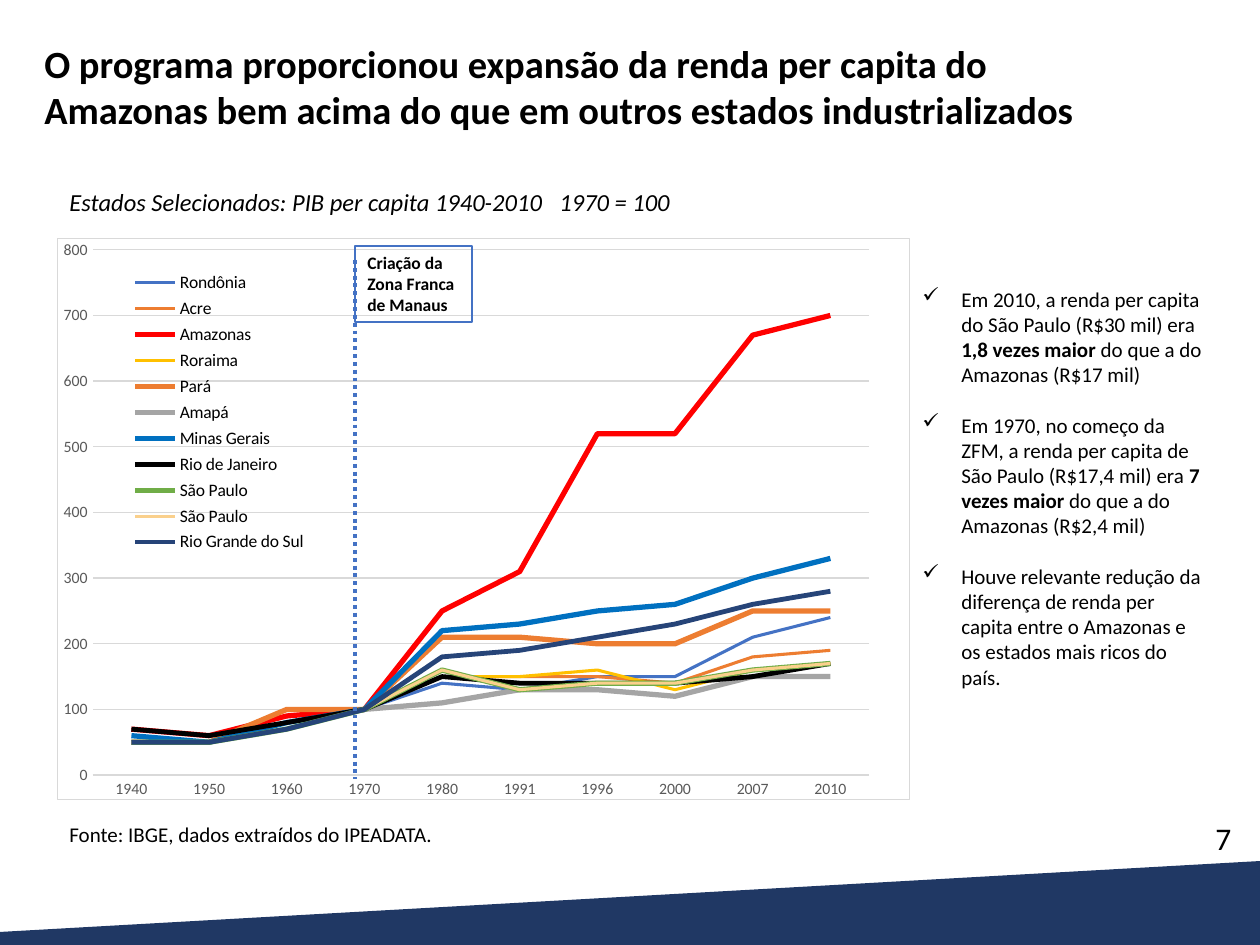
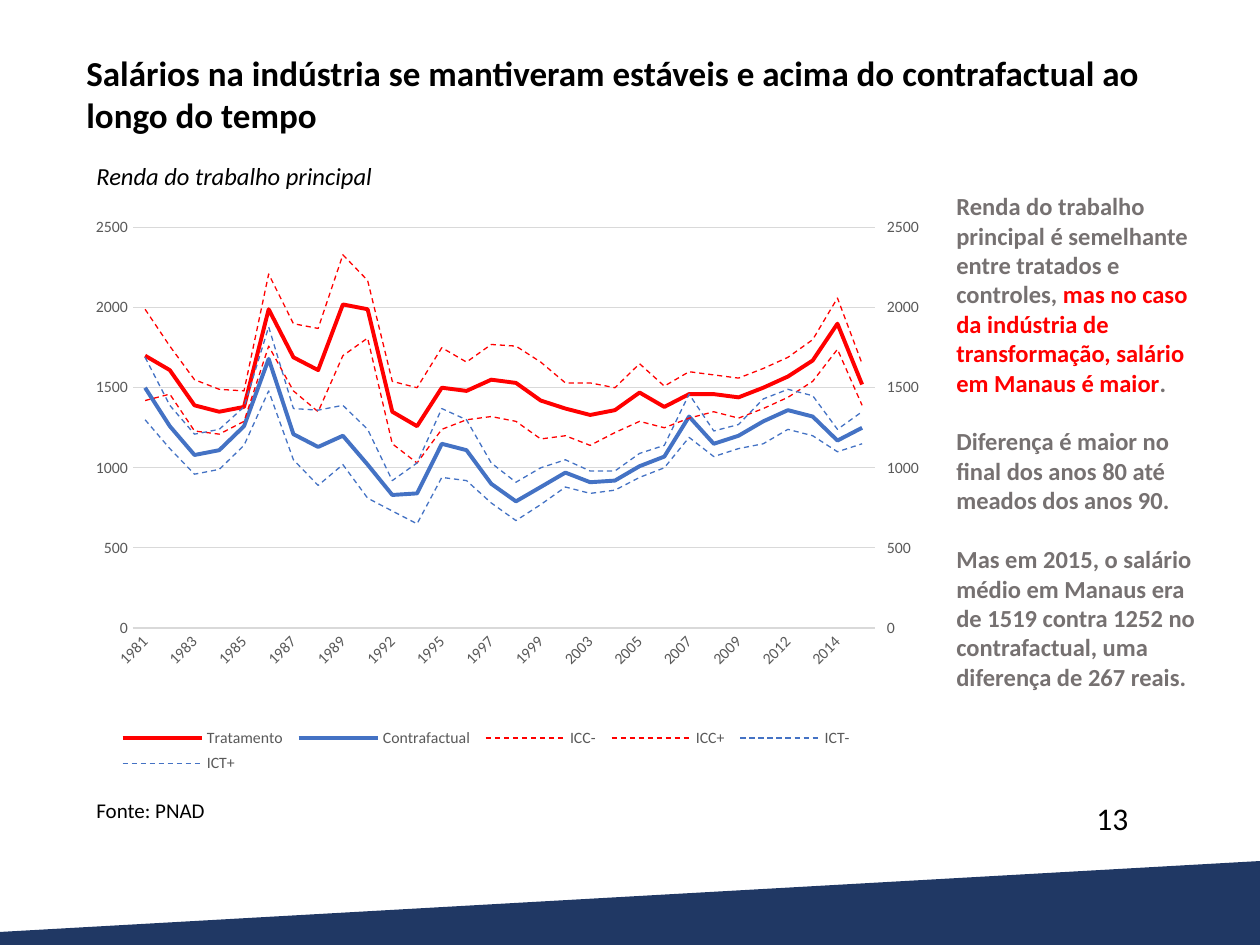
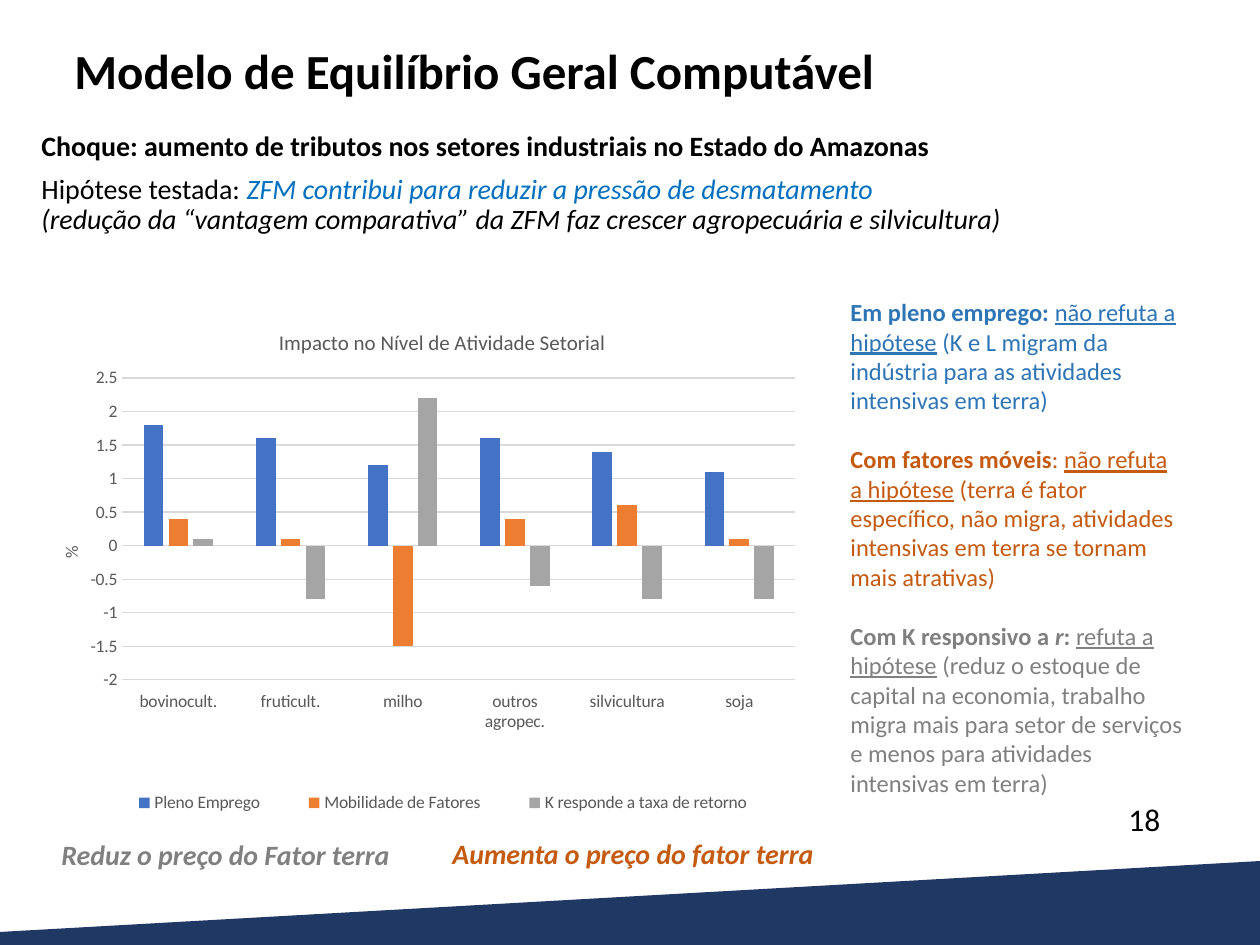
"""Builds three slides on the Zona Franca de Manaus: two line charts and one column chart."""
from copy import deepcopy

from lxml import etree
from pptx import Presentation
from pptx.chart.data import CategoryChartData
from pptx.dml.color import RGBColor
from pptx.enum.chart import XL_CHART_TYPE, XL_LEGEND_POSITION, XL_TICK_LABEL_POSITION, XL_TICK_MARK
from pptx.enum.dml import MSO_LINE
from pptx.enum.shapes import MSO_CONNECTOR, MSO_SHAPE
from pptx.enum.text import MSO_ANCHOR, PP_ALIGN
from pptx.oxml import parse_xml
from pptx.oxml.ns import nsdecls, qn
from pptx.util import Pt

LINE, COLUMN = XL_CHART_TYPE.LINE, XL_CHART_TYPE.COLUMN_CLUSTERED
RIGHT, BOTTOM = XL_LEGEND_POSITION.RIGHT, XL_LEGEND_POSITION.BOTTOM
NO_TICK, LOW = XL_TICK_MARK.NONE, XL_TICK_LABEL_POSITION.LOW
DASH, DOTS = MSO_LINE.DASH, MSO_LINE.ROUND_DOT
MIDDLE, LEFT = MSO_ANCHOR.MIDDLE, PP_ALIGN.LEFT
EMU = 914400 / 126
WIDTH, HEIGHT = 1260, 945
FONT = "Calibri"

BLACK = RGBColor(0x00, 0x00, 0x00)
NAVY = RGBColor(0x20, 0x38, 0x64)
RED = RGBColor(0xFF, 0x00, 0x00)
BLUE = RGBColor(0x44, 0x72, 0xC4)
ORANGE = RGBColor(0xED, 0x7D, 0x31)
SILVER = RGBColor(0xA5, 0xA5, 0xA5)
GOLD = RGBColor(0xFF, 0xC0, 0x00)
SAND = RGBColor(0xFA, 0xD0, 0x8C)
GREEN = RGBColor(0x70, 0xAD, 0x47)
SKY = RGBColor(0x00, 0x70, 0xC0)
DEEP_BLUE = RGBColor(0x26, 0x44, 0x78)
STEEL = RGBColor(0x2E, 0x75, 0xB6)
RUST = RGBColor(0xC5, 0x5A, 0x11)
GRAY = RGBColor(0x80, 0x80, 0x80)
WARM_GRAY = RGBColor(0x76, 0x71, 0x71)
LABEL = RGBColor(0x59, 0x59, 0x59)
GRID = RGBColor(0xD9, 0xD9, 0xD9)

BAND = [(0, 932), (WIDTH, 861), (WIDTH, HEIGHT), (0, HEIGHT)]
BREAK = ("\n", "", BLACK)

INCOME_YEARS = "1940 1950 1960 1970 1980 1991 1996 2000 2007 2010".split()
INCOME = [
    ("Rondônia", [None, None, None, 100, 140, 130, 150, 150, 210, 240], BLUE, 1.75),
    ("Acre", [None, None, None, 100, 150, 150, 150, 140, 180, 190], ORANGE, 1.75),
    ("Amazonas", [70, 60, 90, 100, 250, 310, 520, 520, 670, 700], RED, 3),
    ("Roraima", [None, None, None, 100, 150, 150, 160, 130, 160, 170], GOLD, 1.75),
    ("Pará", [50, 50, 100, 100, 210, 210, 200, 200, 250, 250], ORANGE, 3),
    ("Amapá", [None, None, None, 100, 110, 130, 130, 120, 150, 150], SILVER, 3),
    ("Minas Gerais", [60, 50, 80, 100, 220, 230, 250, 260, 300, 330], SKY, 3),
    ("Rio de Janeiro", [70, 60, 80, 100, 150, 140, 140, 140, 150, 170], BLACK, 2.75),
    ("São Paulo", [50, 50, 70, 100, 160, 130, 140, 140, 160, 170], GREEN, 3),
    ("São Paulo", [50, 50, 70, 100, 160, 130, 140, 140, 160, 170], SAND, 1.75),
    ("Rio Grande do Sul", [50, 50, 70, 100, 180, 190, 210, 230, 260, 280], DEEP_BLUE, 2.75),
]
INCOME_NOTES = [
    [("Em 2010, a renda per capita do São Paulo (R$30 mil) era ", "", BLACK),
     ("1,8 vezes maior ", "b", BLACK), ("do que a do Amazonas (R$17 mil)", "", BLACK)],
    [("Em 1970, no começo da ZFM, a renda per capita de São Paulo (R$17,4 mil) era ", "", BLACK),
     ("7 vezes maior", "b", BLACK), (" do que a do Amazonas (R$2,4 mil)", "", BLACK)],
    [("Houve relevante redução da diferença de renda per capita entre o Amazonas "
      "e os estados mais ricos do país.", "", BLACK)],
]

WAGE_YEARS = ("1981 1982 1983 1984 1985 1986 1987 1988 1989 1990 1992 1993 1995 1996 1997 "
              "1998 1999 2002 2003 2004 2005 2006 2007 2008 2009 2011 2012 2013 2014 2015").split()
WAGES = [
    ("Tratamento", [1700, 1610, 1390, 1350, 1380, 1990, 1690, 1610, 2020, 1990,
                    1350, 1260, 1500, 1480, 1550, 1530, 1420, 1370, 1330, 1360,
                    1470, 1380, 1460, 1460, 1440, 1500, 1570, 1670, 1900, 1520], RED, 2.25),
    ("Contrafactual", [1500, 1260, 1080, 1110, 1260, 1680, 1210, 1130, 1200, 1020,
                       830, 840, 1150, 1110, 900, 790, 880, 970, 910, 920,
                       1010, 1070, 1320, 1150, 1200, 1290, 1360, 1320, 1170, 1250], BLUE, 2.25),
    ("ICC-", [1420, 1460, 1230, 1210, 1290, 1760, 1480, 1350, 1700, 1810,
              1150, 1030, 1240, 1300, 1320, 1290, 1180, 1200, 1140, 1220,
              1290, 1250, 1310, 1350, 1310, 1370, 1440, 1540, 1740, 1390], RED, 0.75),
    ("ICC+", [1990, 1760, 1550, 1490, 1480, 2210, 1900, 1870, 2330, 2170,
              1540, 1500, 1750, 1660, 1770, 1760, 1660, 1530, 1530, 1500,
              1650, 1510, 1600, 1580, 1560, 1620, 1690, 1800, 2060, 1650], RED, 0.75),
    ("ICT-", [1300, 1120, 960, 990, 1140, 1480, 1050, 890, 1020, 810,
              730, 650, 940, 920, 780, 670, 770, 880, 840, 860,
              940, 1000, 1190, 1070, 1120, 1150, 1240, 1200, 1100, 1150], BLUE, 0.75),
    ("ICT+", [1690, 1390, 1210, 1240, 1380, 1880, 1370, 1360, 1390, 1240,
              920, 1030, 1370, 1300, 1030, 910, 1000, 1050, 980, 980,
              1090, 1140, 1460, 1230, 1270, 1430, 1490, 1450, 1240, 1350], BLUE, 0.75),
]
WAGE_NOTES = [
    [("Renda do trabalho principal é semelhante entre tratados e controles, ", "b", WARM_GRAY),
     ("mas no caso da indústria de transformação, salário em Manaus é maior", "b", RED),
     (".", "b", WARM_GRAY)],
    [("Diferença é maior no final dos anos 80 até meados dos anos 90.", "b", WARM_GRAY)],
    [("Mas em 2015, o salário médio em Manaus era de 1519 contra 1252 no contrafactual, "
      "uma diferença de 267 reais.", "b", WARM_GRAY)],
]

SECTORS = ["bovinocult.", "fruticult.", "milho", "outros agropec.", "silvicultura", "soja"]
IMPACTS = [
    ("Pleno Emprego", [1.8, 1.6, 1.2, 1.6, 1.4, 1.1], BLUE, None),
    ("Mobilidade de Fatores", [0.4, 0.1, -1.5, 0.4, 0.6, 0.1], ORANGE, None),
    ("K responde a taxa de retorno", [0.1, -0.8, 2.2, -0.6, -0.8, -0.8], SILVER, None),
]
SHOCK = [
    [("Choque: aumento de tributos nos setores industriais no Estado do Amazonas", "b", BLACK)],
    [("Hipótese testada: ", "", BLACK),
     ("ZFM contribui para reduzir a pressão de desmatamento", "i", SKY), BREAK,
     ("(redução da “vantagem comparativa” da ZFM faz crescer agropecuária e silvicultura)",
      "i", BLACK)],
]
SCENARIOS = [
    [("Em pleno emprego: ", "b", STEEL), ("não refuta a hipótese", "u", STEEL),
     (" (K e L migram da indústria para as atividades intensivas em terra)", "", STEEL)],
    [("Com fatores móveis", "b", RUST), (": ", "", RUST), ("não refuta a hipótese", "u", RUST),
     (" (terra é fator específico, não migra, atividades intensivas em terra "
      "se tornam mais atrativas)", "", RUST)],
    [("Com K responsivo a ", "b", GRAY), ("r", "bi", GRAY), (": ", "b", GRAY),
     ("refuta a hipótese", "u", GRAY),
     (" (reduz o estoque de capital na economia, trabalho migra mais para setor de serviços "
      "e menos para atividades intensivas em terra)", "", GRAY)],
]


def px(*lengths):
    return [round(length * EMU) for length in lengths]


def write(frame, paragraphs, size, gap=0, spacing=None, bullet=None, tab=None):
    frame.word_wrap = True
    for index, spans in enumerate(paragraphs):
        para = frame.paragraphs[0] if index == 0 else frame.add_paragraph()
        para.alignment = LEFT
        if bullet:
            indent = px(39)[0]
            properties = para._p.get_or_add_pPr()
            properties.set("marL", str(indent))
            properties.set("indent", str(-indent))
            etree.SubElement(properties, qn("a:buChar"), char=bullet)
        if tab:
            tabs = etree.SubElement(para._p.get_or_add_pPr(), qn("a:tabLst"))
            etree.SubElement(tabs, qn("a:tab"), pos=str(px(tab)[0]), algn="l")
        if spacing:
            para.line_spacing = spacing
        if index:
            para.space_before = Pt(gap)
        for span in spans:
            if span == BREAK:
                para.add_line_break()
                continue
            text, style, color = span
            run = para.add_run()
            run.text = text
            run.font.name, run.font.size = FONT, Pt(size)
            run.font.bold, run.font.italic = "b" in style, "i" in style
            run.font.underline = "u" in style
            run.font.color.rgb = color


def add_text(page, place, paragraphs, size, **options):
    box = page.shapes.add_textbox(*px(*place))
    write(box.text_frame, paragraphs, size, **options)
    return box


def add_line_of_text(page, place, text, size, style="", color=BLACK, **options):
    return add_text(page, place, [[(text, style, color)]], size, **options)


def add_page(deck, title, title_place, title_size, number, number_at):
    page = deck.slides.add_slide(deck.slide_layouts[6])
    builder = page.shapes.build_freeform(*BAND[0], scale=EMU)
    builder.add_line_segments(BAND[1:])
    band = builder.convert_to_shape()
    band.shadow.inherit = False
    band.fill.solid()
    band.fill.fore_color.rgb = NAVY
    band.line.fill.background()
    heading = add_line_of_text(page, title_place, title, title_size, "b")
    add_line_of_text(page, (*number_at, 121, 50), number, 18)
    return page, heading


def style_font(font, size, color):
    font.name, font.size, font.bold = FONT, Pt(size), False
    font.color.rgb = color


def style_line(line, color, width):
    line.color.rgb = color
    line.width = Pt(width)


def set_layout(parent, index, x, y, w=None, h=None, inner=False):
    for old in parent.findall(qn("c:layout")):
        parent.remove(old)
    layout = etree.Element(qn("c:layout"))
    manual = etree.SubElement(layout, qn("c:manualLayout"))
    settings = [("layoutTarget", "inner")] if inner else []
    settings += [("xMode", "edge"), ("yMode", "edge"), ("x", x), ("y", y)]
    settings += [("w", w), ("h", h)] if w else []
    for name, value in settings:
        etree.SubElement(manual, qn("c:" + name), val=str(value))
    parent.insert(index, layout)


def add_chart(page, place, kind, categories, series, scale, plot, legend, sizes,
              legend_side=RIGHT, legend_color=LABEL):
    data = CategoryChartData()
    data.categories = categories
    for name, values, *_ in series:
        data.add_series(name, values)
    chart = page.shapes.add_chart(kind, *px(*place), data).chart
    style_font(chart.font, 10, BLACK)
    chart.has_title = False
    chart.has_legend = True
    chart.legend.position = legend_side
    chart.legend.include_in_layout = False
    label_size, legend_size = sizes
    style_font(chart.legend.font, legend_size, legend_color)
    set_layout(chart.element.find(".//" + qn("c:legend")), 1, *legend)
    set_layout(chart.element.find(".//" + qn("c:plotArea")), 0, *plot, inner=True)
    for axis in (chart.category_axis, chart.value_axis):
        axis.major_tick_mark = axis.minor_tick_mark = NO_TICK
        style_font(axis.tick_labels.font, label_size, LABEL)
    style_line(chart.category_axis.format.line, GRID, 0.75)
    values_axis = chart.value_axis
    values_axis.minimum_scale, values_axis.maximum_scale, values_axis.major_unit = scale
    values_axis.format.line.fill.background()
    values_axis.has_major_gridlines = True
    style_line(values_axis.major_gridlines.format.line, GRID, 0.75)
    chart.plots[0].vary_by_categories = False
    for item, (_, _, color, width) in zip(chart.plots[0].series, series):
        if width:
            item.smooth = False
            style_line(item.format.line, color, width)
            if width < 1:
                item.format.line.dash_style = DASH
        else:
            item.invert_if_negative = False
            item.format.fill.solid()
            item.format.fill.fore_color.rgb = color
    return chart


def frame_chart(chart):
    chart.element.find(qn("c:chart")).addnext(parse_xml(
        f'<c:spPr {nsdecls("c", "a")}><a:solidFill><a:srgbClr val="FFFFFF"/></a:solidFill>'
        f'<a:ln w="9525"><a:solidFill><a:srgbClr val="{GRID}"/></a:solidFill></a:ln></c:spPr>'))


def slant_years(chart):
    axis = chart.element.find(".//" + qn("c:catAx"))
    axis.find(qn("c:txPr")).find(qn("a:bodyPr")).set("rot", "-2700000")
    skip = etree.Element(qn("c:tickLblSkip"), val="2")
    axis.find(qn("c:noMultiLvlLbl")).addprevious(skip)


def move_to_right_axis(chart, first):
    area = chart.element.find(".//" + qn("c:plotArea"))
    main = area.find(qn("c:lineChart"))
    second = deepcopy(main)
    for index, (kept, moved) in enumerate(zip(main.findall(qn("c:ser")),
                                              second.findall(qn("c:ser")))):
        if index < first:
            second.remove(moved)
        else:
            main.remove(kept)
    main.addnext(second)
    category, value = area.find(qn("c:catAx")), area.find(qn("c:valAx"))
    right, hidden = deepcopy(value), deepcopy(category)
    value.addnext(right)
    right.addnext(hidden)
    for node, own, other in ((right, "5002", "5001"), (hidden, "5001", "5002")):
        node.find(qn("c:axId")).set("val", own)
        node.find(qn("c:crossAx")).set("val", other)
    for node, own in zip(second.findall(qn("c:axId")), ("5001", "5002")):
        node.set("val", own)
    hidden.find(qn("c:delete")).set("val", "1")
    right.remove(right.find(qn("c:majorGridlines")))
    right.find(qn("c:axPos")).set("val", "r")
    right.find(qn("c:crosses")).set("val", "max")
    right.find(qn("c:majorTickMark")).set("val", "out")


def set_chart_title(title, text, size, x, y):
    title.text_frame.text = text
    style_font(title.text_frame.paragraphs[0].runs[0].font, size, LABEL)
    set_layout(title.element, 1, x, y)


def add_income_page(deck):
    page, _ = add_page(deck, "O programa proporcionou expansão da renda per capita do Amazonas "
                       "bem acima do que em outros estados industrializados",
                       (32, 34, 1131, 106), 22, "7", (1203, 813))
    chart = add_chart(page, (57, 238, 853, 562), LINE, INCOME_YEARS, INCOME, (0, 800, 100),
                      (0.041, 0.02, 0.912, 0.937), (0.08, 0.05, 0.22, 0.52), (9, 10),
                      legend_color=BLACK)
    frame_chart(chart)
    add_line_of_text(page, (57, 181, 1118, 43),
                     "Estados Selecionados: PIB per capita 1940-2010\t1970 = 100", 14, "i", tab=490)
    add_line_of_text(page, (57, 815, 936, 63), "Fonte: IBGE, dados extraídos do IPEADATA.", 12)
    add_text(page, (910, 280, 309, 420), INCOME_NOTES, 12, gap=14.4, bullet="✓")
    marker = page.shapes.add_connector(MSO_CONNECTOR.STRAIGHT, *px(355, 260, 355, 779))
    style_line(marker.line, BLUE, 2.25)
    marker.line.dash_style = DOTS
    etree.SubElement(marker._element.spPr, qn("a:effectLst"))
    event = page.shapes.add_shape(MSO_SHAPE.RECTANGLE, *px(355, 246, 117, 76))
    event.shadow.inherit = False
    event.fill.background()
    style_line(event.line, BLUE, 0.75)
    write(event.text_frame, [[("Criação da Zona Franca de Manaus", "b", BLACK)]], 10)


def add_wage_page(deck):
    page, _ = add_page(deck, "Salários na indústria se mantiveram estáveis e acima do "
                       "contrafactual ao longo do tempo", (74, 45, 1081, 97), 20,
                       "13", (1084, 793))
    add_text(page, (944, 185, 266, 541), WAGE_NOTES, 14, gap=16.8)
    add_line_of_text(page, (84, 791, 951, 63), "Fonte: PNAD", 12)
    add_line_of_text(page, (84, 155, 727, 43), "Renda do trabalho principal", 14, "i")
    chart = add_chart(page, (87, 198, 832, 582), LINE, WAGE_YEARS, WAGES, (0, 2500, 500),
                      (0.055, 0.051, 0.892, 0.688), (0.03, 0.9, 0.9, 0.1), (9, 9))
    slant_years(chart)
    move_to_right_axis(chart, 2)


def add_model_page(deck):
    page, heading = add_page(deck, "Modelo de Equilíbrio Geral Computável", (62, 9, 1125, 122), 28,
                             "18", (1116, 794))
    heading.text_frame.vertical_anchor = MIDDLE
    add_text(page, (29, 126, 1230, 661), SHOCK, 16, gap=7.5, spacing=0.9)
    add_text(page, (838, 291, 359, 518), SCENARIOS, 14, gap=16.8)
    chart = add_chart(page, (49, 297, 780, 559), COLUMN, SECTORS, IMPACTS, (-2, 2.5, 0.5),
                      (0.094, 0.145, 0.863, 0.54), (0.06, 0.88, 0.89, 0.05), (10, 10),
                      legend_side=BOTTOM)
    chart.plots[0].gap_width, chart.plots[0].overlap = 219, -27
    chart.category_axis.tick_label_position = LOW
    set_chart_title(chart.chart_title, "Impacto no Nível de Atividade Setorial", 12, 0.29, 0.05)
    unit = chart.value_axis.axis_title
    set_chart_title(unit, "%", 10, 0.01, 0.44)
    unit.element.find(".//" + qn("a:bodyPr")).set("rot", "-5400000")
    add_line_of_text(page, (440, 830, 600, 47), "Aumenta o preço do fator terra", 16, "bi", RUST)
    add_line_of_text(page, (49, 831, 600, 47), "Reduz o preço do Fator terra", 16, "bi", GRAY)


def main():
    deck = Presentation()
    deck.slide_width, deck.slide_height = px(WIDTH, HEIGHT)
    add_income_page(deck)
    add_wage_page(deck)
    add_model_page(deck)
    deck.save("out.pptx")


if __name__ == "__main__":
    main()
